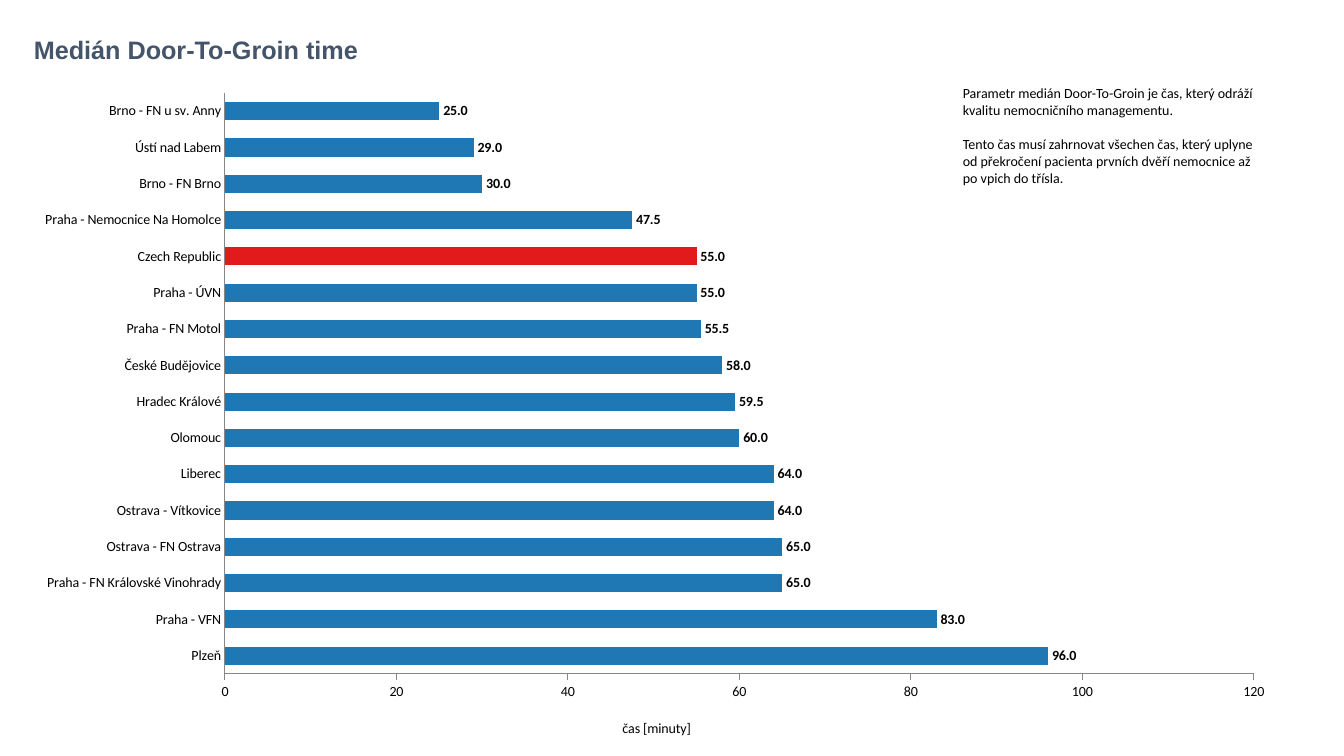
from lxml import etree
from pptx import Presentation
from pptx.chart.data import CategoryChartData
from pptx.dml.color import RGBColor
from pptx.enum.chart import XL_CHART_TYPE as CT, XL_LABEL_POSITION as LP, XL_TICK_MARK as TM
from pptx.enum.text import MSO_ANCHOR
from pptx.oxml.ns import qn
from pptx.util import Emu, Pt

# Content
TITLE = "Medián Door-To-Groin time"
NOTES = [
    "Parametr medián Door-To-Groin je čas, který odráží kvalitu nemocničního managementu.",
    "Tento čas musí zahrnovat všechen čas, který uplyne od překročení pacienta prvních "
    "dvěří nemocnice až po vpich do třísla.",
]
AXIS_TITLE = "čas [minuty]"
HIGHLIGHT = "Czech Republic"
MEDIANS = {
    "Plzeň": 96, "Praha - VFN": 83, "Praha - FN Královské Vinohrady": 65,
    "Ostrava - FN Ostrava": 65, "Ostrava - Vítkovice": 64, "Liberec": 64,
    "Olomouc": 60, "Hradec Králové": 59.5, "České Budějovice": 58,
    "Praha - FN Motol": 55.5, "Praha - ÚVN": 55, HIGHLIGHT: 55,
    "Praha - Nemocnice Na Homolce": 47.5, "Brno - FN Brno": 30,
    "Ústí nad Labem": 29, "Brno - FN u sv. Anny": 25,
}
COLORS = {"title": "44546A", "text": "000000", "bar": "1F78B4",
          "highlight": "E31A1C", "axis": "868686"}

# Boxes in px: left, top, width, height
SLIDE = (1344, 756)
TITLE_BOX = (24, 15, 1103, 73)
CHART_BOX = (20, 80, 1270, 674)
NOTES_BOX = (953, 80, 317, 199)
PLOT_BOX = (225, 93, 1029, 581)
AXIS_TITLE_AT = (620, 717)


def px(n):
    return Emu(round(n * 914400 / 100.8))


def style(font, size, color="text", name="Calibri", bold=False):
    font.size, font.name, font.bold = Pt(size), name, bold
    font.color.rgb = RGBColor.from_string(COLORS[color])


def add_text(s, box, paragraphs, gap=0, **font):
    tf = s.shapes.add_textbox(*map(px, box)).text_frame
    tf.word_wrap = True
    for i, text in enumerate(paragraphs):
        p = tf.add_paragraph() if i else tf.paragraphs[0]
        p.text = text
        if i:
            p.space_before = Pt(gap)
        style(p.font, **font)
    return tf


def place(parent, index, left, top, width=None, height=None):
    """Fix the position of a chart part, as fractions of the chart."""
    for old in parent.findall(qn("c:layout")):
        parent.remove(old)
    layout = etree.Element(qn("c:layout"))
    manual = etree.SubElement(layout, qn("c:manualLayout"))
    x, y, w, h = CHART_BOX
    settings = [("xMode", "edge"), ("yMode", "edge"),
                ("x", round((left - x) / w, 4)), ("y", round((top - y) / h, 4))]
    if width:
        settings.insert(0, ("layoutTarget", "inner"))
        settings += [("w", round(width / w, 4)), ("h", round(height / h, 4))]
    for tag, val in settings:
        etree.SubElement(manual, qn("c:" + tag)).set("val", str(val))
    parent.insert(index, layout)


def add_medians(s):
    data = CategoryChartData()
    data.categories = list(MEDIANS)
    data.add_series("Series 1", list(MEDIANS.values()))
    chart = s.shapes.add_chart(CT.BAR_CLUSTERED, *map(px, CHART_BOX), data).chart
    chart.has_legend = chart.has_title = False
    style(chart.font, 10)

    # Bars and value labels
    plot = chart.plots[0]
    plot.gap_width, plot.vary_by_categories = 100, False
    series = plot.series[0]
    series.format.fill.solid()
    series.format.fill.fore_color.rgb = RGBColor.from_string(COLORS["bar"])
    fill = series.points[list(MEDIANS).index(HIGHLIGHT)].format.fill
    fill.solid()
    fill.fore_color.rgb = RGBColor.from_string(COLORS["highlight"])
    labels = series.data_labels
    labels.show_value, labels.position = True, LP.OUTSIDE_END
    labels.number_format, labels.number_format_is_linked = "0.0", False
    style(labels.font, 10, bold=True)

    # Axes
    cat, val = chart.category_axis, chart.value_axis
    for axis, tick in ((cat, TM.NONE), (val, TM.OUTSIDE)):
        axis.has_major_gridlines = False
        axis.major_tick_mark, axis.minor_tick_mark = tick, TM.NONE
        axis.format.line.color.rgb = RGBColor.from_string(COLORS["axis"])
        axis.format.line.width = Pt(0.75)
        style(axis.tick_labels.font, 10)
    val.minimum_scale, val.maximum_scale, val.major_unit = 0, 120, 20
    val.tick_labels.number_format = "0"
    val.tick_labels.number_format_is_linked = False
    p = val.axis_title.text_frame.paragraphs[0]
    p.text = AXIS_TITLE
    style(p.font, 10)

    plot_area = chart.element.find(".//" + qn("c:plotArea"))
    place(plot_area, 0, *PLOT_BOX)
    place(plot_area.find(".//" + qn("c:title")), 1, *AXIS_TITLE_AT)


def main():
    prs = Presentation()
    prs.slide_width, prs.slide_height = map(px, SLIDE)
    s = prs.slides.add_slide(prs.slide_layouts[6])
    tf = add_text(s, TITLE_BOX, [TITLE], size=18, color="title", name="Arial", bold=True)
    tf.vertical_anchor = MSO_ANCHOR.MIDDLE
    tf.paragraphs[0].line_spacing = 0.9
    add_medians(s)
    add_text(s, NOTES_BOX, NOTES, gap=12, size=10)
    prs.save("out.pptx")


if __name__ == "__main__":
    main()
